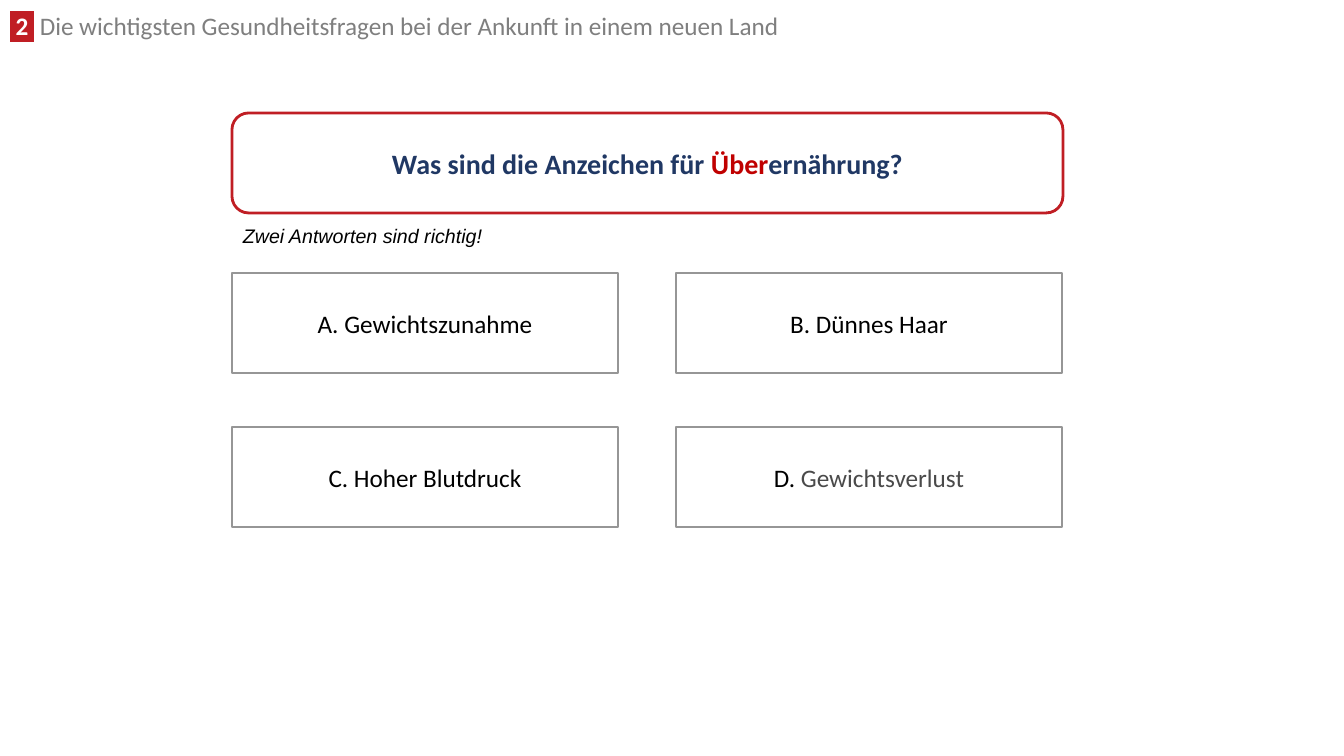
import pptx
import pptx.dml.color
import pptx.enum.shapes
import pptx.enum.text
import pptx.oxml
import pptx.oxml.ns
import pptx.util

SCALE = 914400 / 100.8  # EMU in one px
COLORS = {
    "white": "FFFFFF", "red": "C01E24", "accent": "C00000", "navy": "203864",
    "title": "7F7F7F", "border": "969696", "black": "000000", "gray": "4A4A4A",
}
KINDS = pptx.enum.shapes.MSO_SHAPE
ALIGN = pptx.enum.text.PP_ALIGN


def px(num):
    return pptx.util.Emu(round(num * SCALE))


def color(name):
    return pptx.dml.color.RGBColor.from_string(COLORS[name])


class Quiz:
    def __init__(self, deck):
        self.slide = deck.slides.add_slide(deck.slide_layouts[6])
        self.font = "Calibri"
        self.line = pptx.util.Pt(2)

    def letter(self, para, parts, size, bold=False, italic=False, font=None):
        """Add one run for each (text, color) pair."""
        for text, tint in parts:
            run = para.add_run()
            run.text = text
            face = run.font
            face.name = font or self.font
            face.size = pptx.util.Pt(size)
            face.bold, face.italic = bold, italic
            face.color.rgb = color(tint)

    def mark(self, run, tint):
        """Put a highlight behind a run, right after its solid fill."""
        space = pptx.oxml.ns.nsdecls("a")
        light = pptx.oxml.parse_xml(
            f'<a:highlight {space}><a:srgbClr val="{COLORS[tint]}"/></a:highlight>')
        props = run.font._element
        props.find(pptx.oxml.ns.qn("a:solidFill")).addnext(light)

    def label(self, left, top, width, height, parts, size, wrap=True, **style):
        box = self.slide.shapes.add_textbox(px(left), px(top), px(width), px(height))
        frame = box.text_frame
        frame.word_wrap = wrap
        frame.auto_size = pptx.enum.text.MSO_AUTO_SIZE.SHAPE_TO_FIT_TEXT
        para = frame.paragraphs[0]
        self.letter(para, parts, size, **style)
        return para

    def card(self, kind, left, top, width, height, parts, size, edge, **style):
        box = self.slide.shapes.add_shape(kind, px(left), px(top), px(width), px(height))
        box.shadow.inherit = False
        box.fill.solid()
        box.fill.fore_color.rgb = color("white")
        box.line.color.rgb = color(edge)
        box.line.width = self.line
        frame = box.text_frame
        frame.word_wrap = True
        frame.vertical_anchor = pptx.enum.text.MSO_ANCHOR.MIDDLE
        para = frame.paragraphs[0]
        para.alignment = ALIGN.CENTER
        self.letter(para, parts, size, **style)


def main():
    deck = pptx.Presentation()
    deck.slide_width, deck.slide_height = px(1344), px(756)
    quiz = Quiz(deck)

    # Chapter heading with its number
    title = " Die wichtigsten Gesundheitsfragen bei der Ankunft in einem neuen Land"
    head = quiz.label(0, 11, 864, 34, [(" 2 ", "white"), (title, "title")], 18)
    head.line_spacing = 0.8
    head.runs[0].font.bold = True
    quiz.mark(head.runs[0], "red")

    # Question
    ask = [("Was sind die Anzeichen für ", "navy"), ("Über", "accent"),
           ("ernährung?", "navy")]
    quiz.card(KINDS.ROUNDED_RECTANGLE, 232, 113, 831, 100, ask, 20, "red", bold=True)

    # Answers in two columns
    answers = [
        [("A. Gewichtszunahme", "black")],
        [("B. Dünnes Haar", "black")],
        [("C. Hoher Blutdruck", "black")],
        [("D. ", "black"), ("Gewichtsverlust", "gray")],
    ]
    for num, parts in enumerate(answers):
        row, col = divmod(num, 2)
        quiz.card(KINDS.RECTANGLE, 232 + 444 * col, 273 + 154 * row, 386, 100,
                  parts, 18, "border")

    # Hint
    quiz.label(233, 219, 267, 34, [("Zwei Antworten sind richtig!", "black")], 14,
               wrap=False, italic=True, font="Arial")

    deck.save("out.pptx")


if __name__ == "__main__":
    main()
